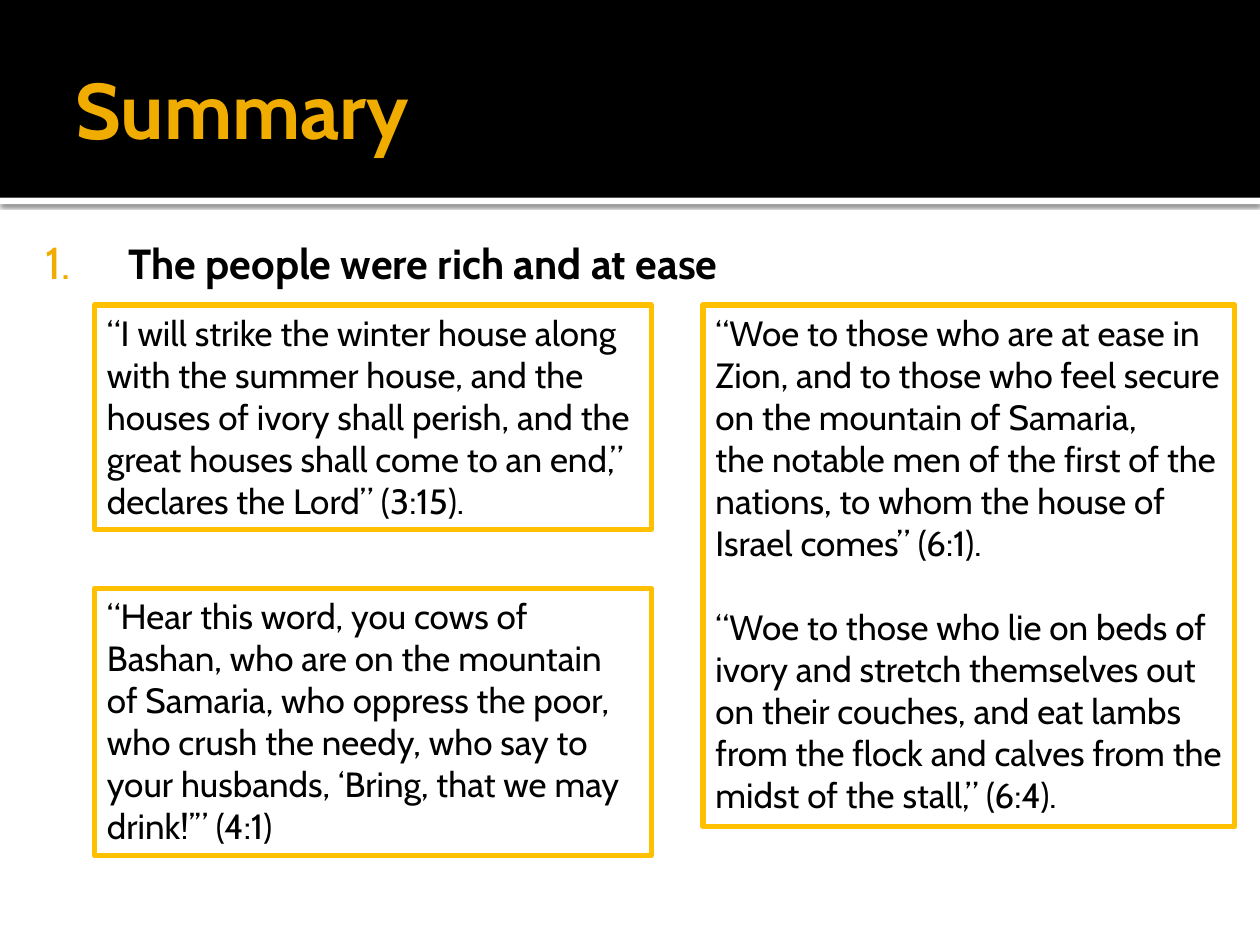
import pptx
import pptx.dml.color
import pptx.enum.shapes
import pptx.enum.text
import pptx.oxml
import pptx.oxml.ns
import pptx.util

Inches, Pt = pptx.util.Inches, pptx.util.Pt
MSO_ANCHOR, MSO_AUTO_SIZE = pptx.enum.text.MSO_ANCHOR, pptx.enum.text.MSO_AUTO_SIZE
LEFT = pptx.enum.text.PP_ALIGN.LEFT

FONT = "Cabin"
BLACK, WHITE, GOLD, AMBER = "000000", "FFFFFF", "F0AD00", "FFC000"

HEADING = "Summary"
POINT = "The people were rich and at ease"
BANDS = [((0, 1.57, 10, 0.05), WHITE), ((0, 0, 10, 1.57), BLACK)]
QUOTES = [
    ((0.75, 2.42, 4.42, 1.78), [
        ("“I will strike the winter house along with the summer house, and the houses of ivory "
         "shall perish, and the great houses shall come to an end,” declares the Lord” (3:15).", 0),
    ]),
    ((0.75, 4.67, 4.42, 2.12), [
        ("“Hear this word, you cows of Bashan, who are on the mountain of Samaria, who oppress "
         "the poor, who crush the needy, who say to your husbands, ‘Bring, that we may "
         "drink!’” (4:1)", 0),
    ]),
    ((5.58, 2.42, 4.22, 4.14), [
        ("“Woe to those who are at ease in Zion, and to those who feel secure on the mountain "
         "of Samaria,", 0),
        ("the notable men of the first of the nations, to whom the house of Israel comes” (6:1).", 0),
        ("“Woe to those who lie on beds of ivory and stretch themselves out on their couches, "
         "and eat lambs from the flock and calves from the midst of the stall,” (6:4).", 24),
    ]),
]
NUMBERING = [
    f'<a:buClr {{ns}}><a:srgbClr val="{GOLD}"/></a:buClr>',
    '<a:buSzPct {ns} val="80000"/>',
    f'<a:buFont {{ns}} typeface="{FONT}"/>',
    '<a:buAutoNum {ns} type="arabicPeriod"/>',
]
SHADOW = ('<a:effectLst {ns}><a:outerShdw blurRad="31750" dist="10160" dir="5400000" '
          'algn="t" rotWithShape="0"><a:srgbClr val="000000"><a:alpha val="60000"/>'
          '</a:srgbClr></a:outerShdw></a:effectLst>')


def rgb(value):
    return pptx.dml.color.RGBColor.from_string(value)


def element(xml):
    return pptx.oxml.parse_xml(xml.format(ns=pptx.oxml.ns.nsdecls("a")))


def set_all(target, values):
    for key, value in values.items():
        setattr(target, key, value)


def place(holder, box):
    set_all(holder, dict(zip(("left", "top", "width", "height"), map(Inches, box))))


def set_frame(frame, anchor, insets, auto_size=MSO_AUTO_SIZE.NONE):
    set_all(frame, {"word_wrap": True, "auto_size": auto_size, "vertical_anchor": anchor})
    sides = ("margin_left", "margin_top", "margin_right", "margin_bottom")
    set_all(frame, dict(zip(sides, map(Inches, insets))))


def write(paragraph, text, size, color=BLACK, bold=False):
    run = paragraph.add_run()
    run.text = text
    set_all(run.font, {"name": FONT, "size": Pt(size), "bold": bold})
    run.font.color.rgb = rgb(color)


def add_rectangle(slide, box):
    rectangle = slide.shapes.add_shape(
        pptx.enum.shapes.MSO_SHAPE.RECTANGLE, *map(Inches, box))
    rectangle.shadow.inherit = False
    return rectangle


def add_bands(slide):
    for position, (box, color) in enumerate(BANDS):
        band = add_rectangle(slide, box)
        band.fill.solid()
        band.fill.fore_color.rgb = rgb(color)
        band.line.fill.background()
        if color == WHITE:
            properties = band.element.spPr
            properties.remove(properties.find(pptx.oxml.ns.qn("a:effectLst")))
            properties.append(element(SHADOW))
        slide.shapes.element.insert(2 + position, band.element)


def add_heading(slide):
    heading = slide.shapes.title
    place(heading, (0.5, 0.17, 9, 1.37))
    set_frame(heading.text_frame, MSO_ANCHOR.MIDDLE, (0.1, 0.05, 0.05, 0.05))
    line = heading.text_frame.paragraphs[0]
    line.alignment = LEFT
    write(line, HEADING, 45, GOLD, True)


def add_point(slide):
    point = slide.placeholders[1]
    place(point, (0.17, 1.67, 9.67, 5.66))
    set_frame(point.text_frame, MSO_ANCHOR.TOP, (0.06, 0.1, 0.1, 0.05))
    line = point.text_frame.paragraphs[0]
    set_all(line, {"alignment": LEFT, "space_before": Pt(0)})
    write(line, " ", 32)
    write(line, POINT, 24, bold=True)
    properties = line._p.get_or_add_pPr()
    properties.set("marL", str(Inches(0.69)))
    properties.set("indent", str(Inches(-0.56)))
    for xml in NUMBERING:
        properties.append(element(xml))


def add_quote(slide, box, passages):
    quote = add_rectangle(slide, box)
    quote.fill.background()
    quote.line.color.rgb = rgb(AMBER)
    quote.line.width = Pt(3)
    frame = quote.text_frame
    set_frame(frame, MSO_ANCHOR.TOP, (0.1, 0.05, 0.1, 0.05), MSO_AUTO_SIZE.SHAPE_TO_FIT_TEXT)
    for index, (text, gap) in enumerate(passages):
        line = frame.add_paragraph() if index else frame.paragraphs[0]
        set_all(line, {"alignment": LEFT, "space_before": Pt(gap)})
        write(line, text, 20)


def main():
    deck = pptx.Presentation()
    set_all(deck, {"slide_width": Inches(10), "slide_height": Inches(7.5)})
    slide = deck.slides.add_slide(deck.slide_layouts[1])
    add_bands(slide)
    add_heading(slide)
    add_point(slide)
    for box, passages in QUOTES:
        add_quote(slide, box, passages)
    deck.save("out.pptx")


if __name__ == "__main__":
    main()
